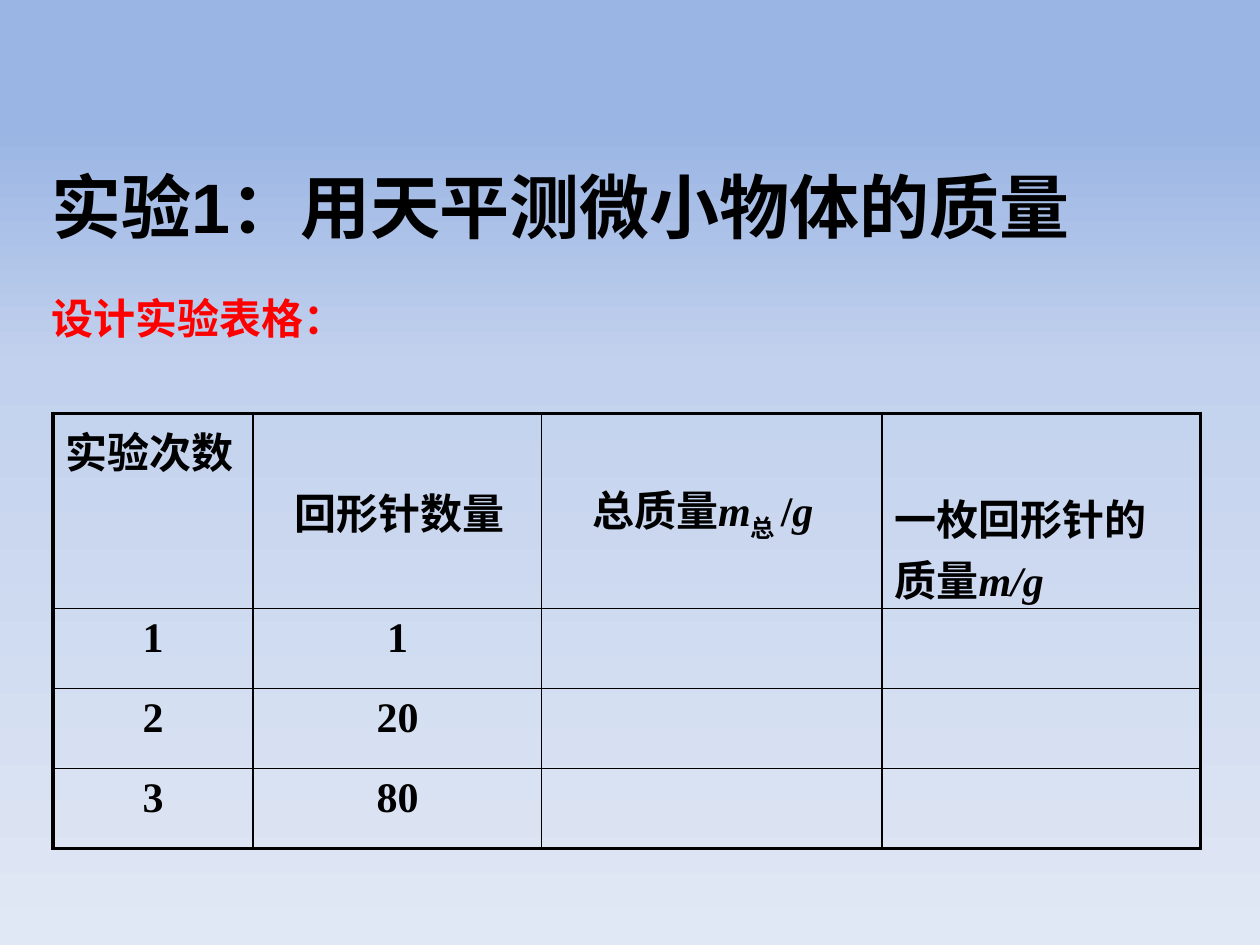
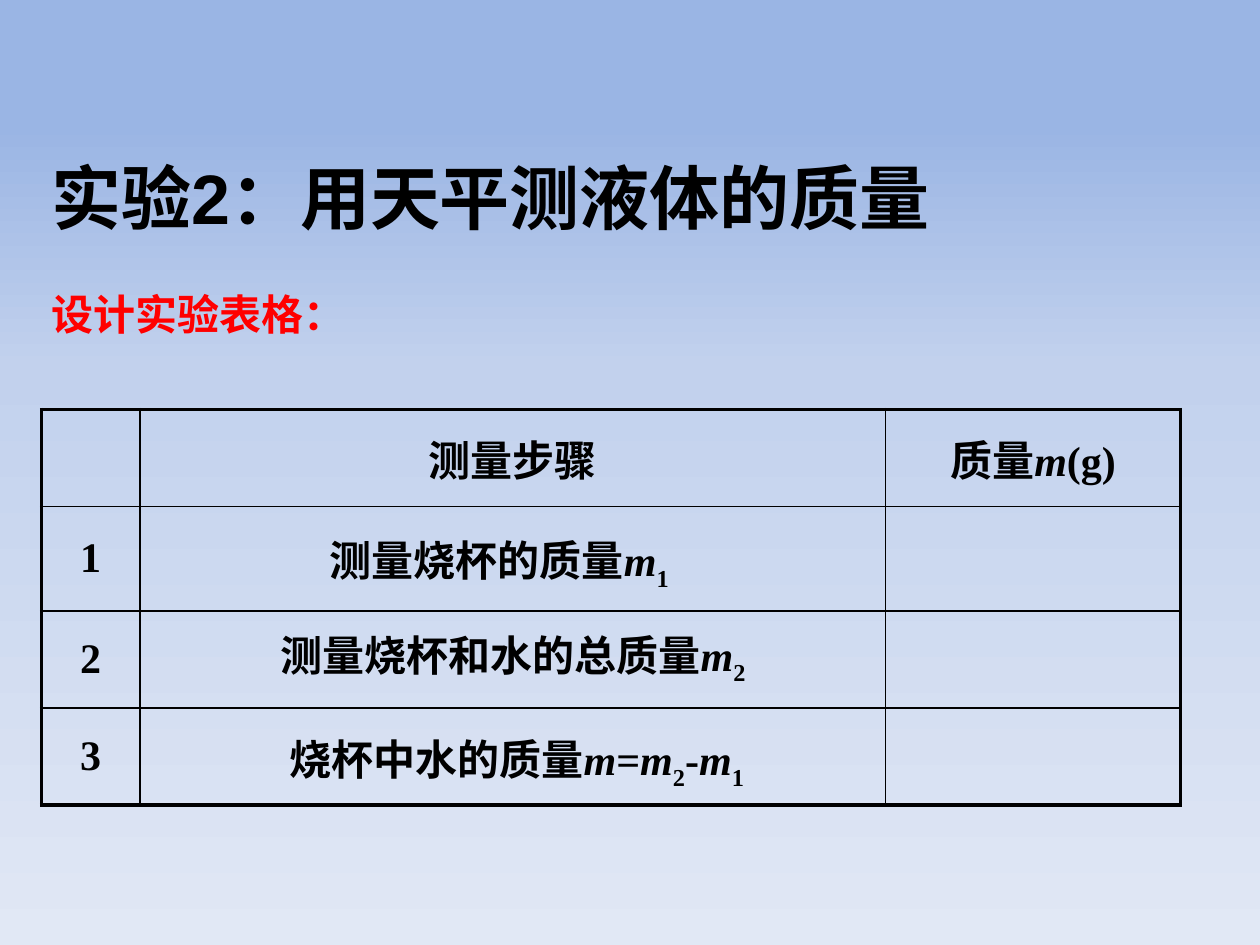
"""Build two slides with tables for balance experiments on mass."""
from copy import deepcopy

from lxml import etree
from pptx import Presentation
from pptx.dml.color import RGBColor
from pptx.enum.text import MSO_ANCHOR, MSO_AUTO_SIZE, PP_ALIGN
from pptx.oxml.ns import qn
from pptx.util import Inches, Pt

BLACK = RGBColor(0x00, 0x00, 0x00)
RED = RGBColor(0xFF, 0x00, 0x00)
SKY = RGBColor(0x9A, 0xB5, 0xE4)
HAZE = RGBColor(0xC2, 0xD1, 0xED)
MIST = RGBColor(0xE1, 0xE8, 0xF5)
BACKGROUND_STOPS = ((0.13, SKY), (0.39, HAZE), (1, MIST))

TOP, MIDDLE, BOTTOM = MSO_ANCHOR.TOP, MSO_ANCHOR.MIDDLE, MSO_ANCHOR.BOTTOM
LEFT, CENTER = PP_ALIGN.LEFT, PP_ALIGN.CENTER
FIT_SHAPE = MSO_AUTO_SIZE.SHAPE_TO_FIT_TEXT

SANS, SERIF, CJK = "Arial", "Times New Roman", "Noto Sans CJK SC"
LATO, CALIBRI = "Lato", "Calibri"
TITLE_SIZE, BODY_SIZE = 40, 24
OUTER_LINE, INNER_LINE = 2.25, 1
GRID_COLUMNS, GRID_ROWS = 100, 75


def plain(text, font=SERIF):
    """Return an upright run."""
    return text, font, False, False


def symbol(text):
    """Return an italic run for a physical quantity."""
    return text, SERIF, True, False


def subscript(text):
    """Return a lowered run."""
    return text, SERIF, False, True


class Deck:
    """Hold the shared style and the current slide."""

    def __init__(self):
        """Start an empty 4:3 presentation."""
        self.presentation = Presentation()
        self.presentation.slide_width = Inches(10)
        self.presentation.slide_height = Inches(7.5)
        self.slide = None

    def x(self, columns):
        """Turn grid columns into a length."""
        return round(self.presentation.slide_width * columns / GRID_COLUMNS)

    def y(self, rows):
        """Turn grid rows into a length."""
        return round(self.presentation.slide_height * rows / GRID_ROWS)

    def add_slide(self):
        """Add a blank slide with the gradient background."""
        self.slide = self.presentation.slides.add_slide(self.presentation.slide_layouts[6])
        fill = self.slide.background.fill
        fill.gradient()
        fill.gradient_angle = 270
        stop_list = self.slide.element.find(".//" + qn("a:gsLst"))
        stop_list.append(deepcopy(stop_list[-1]))
        for stop, (position, color) in zip(fill.gradient_stops, BACKGROUND_STOPS):
            stop.position = position
            stop.color.rgb = color

    def fill_frame(self, frame, runs, size=BODY_SIZE, color=BLACK, align=LEFT):
        """Fill a text frame with one bold paragraph."""
        paragraph = frame.paragraphs[0]
        paragraph.alignment = align
        paragraph.font.size = Pt(size)
        paragraph.font.bold = True
        paragraph.font.color.rgb = color
        fonts = {font for _, font, _, _ in runs}
        mixed = len(fonts) > 1
        if not mixed:
            paragraph.font.name = fonts.pop()
        for text, font, italic, lowered in runs:
            run = paragraph.add_run()
            run.text = text
            if mixed:
                run.font.name = font
            if italic:
                run.font.italic = True
            if lowered:
                run._r.get_or_add_rPr().set("baseline", "-25000")

    def text(self, left, top, width, height, runs, wrap=False, anchor=MIDDLE, **style):
        """Add a text box."""
        box = self.slide.shapes.add_textbox(self.x(left), self.y(top), self.x(width), self.y(height))
        frame = box.text_frame
        frame.word_wrap = wrap
        frame.auto_size = FIT_SHAPE
        frame.vertical_anchor = anchor
        self.fill_frame(frame, runs, **style)

    def heading(self, title, title_top, subtitle_top):
        """Add the experiment title and the red line under it."""
        self.text(3.1, title_top, 92.5, 7.7, [plain(title, SANS)], wrap=True, anchor=TOP, size=TITLE_SIZE)
        self.text(3.1, subtitle_top, 25.7, 5, [plain("设计实验表格：", SANS)], color=RED)

    def table(self, left, top, widths, heights):
        """Add an unfilled table with a heavy frame and thin inner lines."""
        shape = self.slide.shapes.add_table(
            len(heights), len(widths), self.x(left), self.y(top), self.x(sum(widths)), self.y(sum(heights)))
        table = shape.table
        table.first_row = table.horz_banding = False
        for column, width in zip(table.columns, widths):
            column.width = self.x(width)
        for row, height in zip(table.rows, heights):
            row.height = self.y(height)
        last_row, last_column = len(heights) - 1, len(widths) - 1
        for row in range(len(heights)):
            for column in range(len(widths)):
                cell = table.cell(row, column)
                outer = {"L": column == 0, "R": column == last_column, "T": row == 0, "B": row == last_row}
                for side, is_outer in outer.items():
                    self.border(cell, side, OUTER_LINE if is_outer else INNER_LINE)
                cell.fill.background()
        return table

    def border(self, cell, side, width):
        """Draw one black side of a cell."""
        line = etree.SubElement(cell._tc.get_or_add_tcPr(), qn("a:ln" + side), w=str(Pt(width)))
        fill = etree.SubElement(line, qn("a:solidFill"))
        etree.SubElement(fill, qn("a:srgbClr"), val=str(BLACK))

    def cell(self, cell, runs, anchor=MIDDLE, align=CENTER, indent=0):
        """Put text into a table cell."""
        cell.vertical_anchor = anchor
        cell.margin_left = self.x(1 + indent)
        if anchor == BOTTOM:
            cell.margin_bottom = 0
        self.fill_frame(cell.text_frame, runs, align=align)


def paper_clip_slide(deck):
    """Build the slide on weighing small objects."""
    deck.add_slide()
    deck.heading("实验1：用天平测微小物体的质量", 12.5, 22.7)
    table = deck.table(4.2, 32.8, (15.9, 22.9, 27, 25.3), (15.5, 6.35, 6.35, 6.35))
    total_mass = [plain("总质量", LATO), symbol("m"), subscript("总 "), plain("/"), symbol("g")]
    headers = (
        ([plain("实验次数", CALIBRI)], TOP, 0),
        ([plain("回形针数量", LATO)], MIDDLE, 2.3),
        (total_mass, MIDDLE, 3),
        ([plain("一枚回形针的质量", SANS), symbol("m/g")], BOTTOM, 0),
    )
    for column, (runs, anchor, indent) in enumerate(headers):
        deck.cell(table.cell(0, column), runs, anchor, LEFT, indent)
    for row, clips in enumerate((1, 20, 80), start=1):
        for column, number in enumerate((row, clips)):
            deck.cell(table.cell(row, column), [plain(str(number))], TOP)


def liquid_slide(deck):
    """Build the slide on weighing a liquid."""
    deck.add_slide()
    deck.heading("实验2：用天平测液体的质量", 11.8, 22.4)
    table = deck.table(3.3, 32.5, (7.8, 59.2, 23.4), (7.7, 8.3, 7.7, 7.7))
    deck.cell(table.cell(0, 1), [plain("测量步骤", CJK)])
    deck.cell(table.cell(0, 2), [plain("质量", CJK), symbol("m"), plain("(g)")])
    beaker, total = [symbol("m"), subscript("1")], [symbol("m"), subscript("2")]
    steps = (
        (25.2, 42.2, 31.1, "测量烧杯的质量", beaker),
        (21.3, 49.7, 40.4, "测量烧杯和水的总质量", total),
        (22, 58, 40.5, "烧杯中水的质量", [symbol("m"), plain("="), *total, plain("-"), *beaker]),
    )
    for row, (left, top, width, label, quantity) in enumerate(steps, start=1):
        deck.cell(table.cell(row, 0), [plain(str(row))])
        deck.text(left, top, width, 5, [plain(label, SANS), *quantity])


def main():
    """Build and save the presentation."""
    deck = Deck()
    paper_clip_slide(deck)
    liquid_slide(deck)
    deck.presentation.save("out.pptx")


if __name__ == "__main__":
    main()
